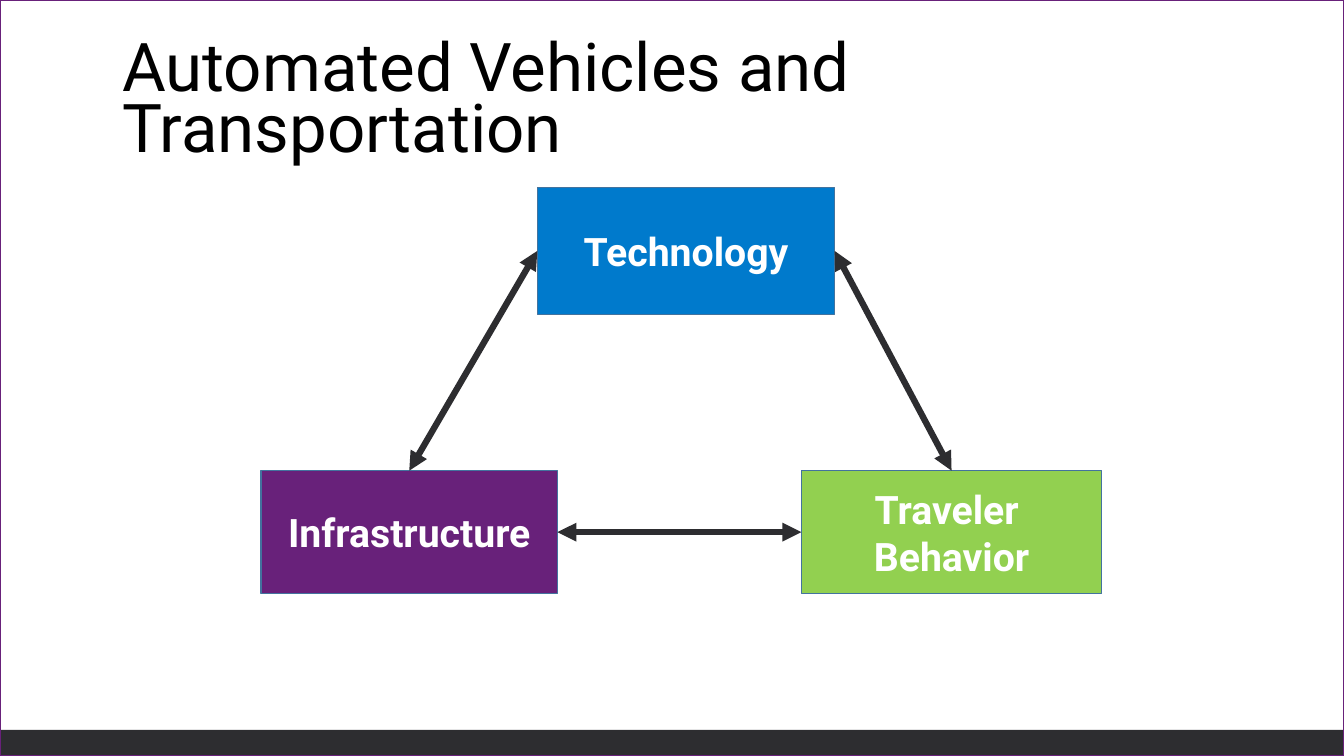
import pptx
import pptx.util
import pptx.dml.color
import pptx.enum.shapes
import pptx.enum.text
import pptx.oxml
import pptx.oxml.ns

Pt = pptx.util.Pt
RGBColor = pptx.dml.color.RGBColor
RECT = pptx.enum.shapes.MSO_SHAPE.RECTANGLE
ANCHOR = pptx.enum.text.MSO_ANCHOR
ALIGN = pptx.enum.text.PP_ALIGN

FONT = "Roboto"
BLACK = RGBColor(0x00, 0x00, 0x00)
WHITE = RGBColor(0xFF, 0xFF, 0xFF)
DARK = RGBColor(0x2D, 0x2D, 0x30)
BLUE = RGBColor(0x00, 0x7A, 0xCC)
PURPLE = RGBColor(0x68, 0x21, 0x7A)
GREEN = RGBColor(0x92, 0xD0, 0x50)
EDGE = RGBColor(0x43, 0x73, 0x9E)

WIDTH, HEIGHT = 960, 540
TOP, LEFT, BOTTOM, RIGHT = range(4)


def add_rect(slide, box, fill=None, line=None):
    """Add a flat rectangle; without a colour its fill or line is left off."""
    rect = slide.shapes.add_shape(RECT, *map(Pt, box))
    rect.shadow.inherit = False
    if fill is None:
        rect.fill.background()
    else:
        rect.fill.solid()
        rect.fill.fore_color.rgb = fill
    if line is None:
        rect.line.fill.background()
    else:
        rect.line.color.rgb = line
        rect.line.width = Pt(1)
    return rect


def add_frame(slide, box):
    """Add the bottom band and the thin border around the box."""
    left, top, width, height = box
    band = 18.6
    add_rect(slide, (left, top + height - band, width, band), fill=DARK)
    add_rect(slide, box, line=PURPLE)


def set_title(slide, box, text):
    title = slide.shapes.title
    title.left, title.top, title.width, title.height = map(Pt, box)
    frame = title.text_frame
    frame.word_wrap = True
    frame.auto_size = pptx.enum.text.MSO_AUTO_SIZE.NONE
    frame.vertical_anchor = ANCHOR.TOP
    frame.text = text
    par = frame.paragraphs[0]
    par.alignment = ALIGN.LEFT
    par.line_spacing = 0.75
    par.font.name = FONT
    par.font.size = Pt(48)
    par.font.color.rgb = BLACK


def add_node(slide, box, text, fill):
    node = add_rect(slide, box, fill, EDGE)
    frame = node.text_frame
    frame.word_wrap = True
    frame.vertical_anchor = ANCHOR.MIDDLE
    frame.text = text
    for par in frame.paragraphs:
        par.alignment = ALIGN.CENTER
        par.font.name = FONT
        par.font.size = Pt(28)
        par.font.bold = True
        par.font.color.rgb = WHITE
    return node


def add_link(slide, start, side, end, goal):
    """Join a side of one node to a side of another with a double arrow."""
    kind = pptx.enum.shapes.MSO_CONNECTOR.STRAIGHT
    link = slide.shapes.add_connector(kind, 0, 0, 0, 0)
    link.begin_connect(start, side)
    link.end_connect(end, goal)
    link.line.color.rgb = DARK
    link.line.width = Pt(4.5)
    space = pptx.oxml.ns.nsdecls("a")
    for tag in ("headEnd", "tailEnd"):
        arrow = pptx.oxml.parse_xml(f'<a:{tag} {space} type="triangle"/>')
        link.line._get_or_add_ln().append(arrow)
    link._element.spPr.append(pptx.oxml.parse_xml(f"<a:effectLst {space}/>"))


def add_cycle(slide, box):
    """Add three linked nodes: one at the top, two in the bottom corners."""
    left, top, width, height = box
    low = 87.8
    base = top + height - low
    tech = add_node(slide, (left + 197.3, top, 212.4, 90.7),
                    "Technology", BLUE)
    infra = add_node(slide, (left, base, 211.7, low),
                     "Infrastructure", PURPLE)
    travel = add_node(slide, (left + width - 214.6, base, 214.6, low),
                      "Traveler \nBehavior", GREEN)
    add_link(slide, infra, TOP, tech, LEFT)
    add_link(slide, travel, TOP, tech, RIGHT)
    add_link(slide, travel, LEFT, infra, RIGHT)


def main():
    deck = pptx.Presentation()
    deck.slide_width, deck.slide_height = Pt(WIDTH), Pt(HEIGHT)
    slide = deck.slides.add_slide(deck.slide_layouts[5])
    add_frame(slide, (0, 0, WIDTH, HEIGHT))
    set_title(slide, (80, 27.4, 810.7, 51),
              "Automated Vehicles and Transportation")
    add_cycle(slide, (186.5, 133.9, 600.5, 290.1))
    deck.save("out.pptx")


if __name__ == "__main__":
    main()
